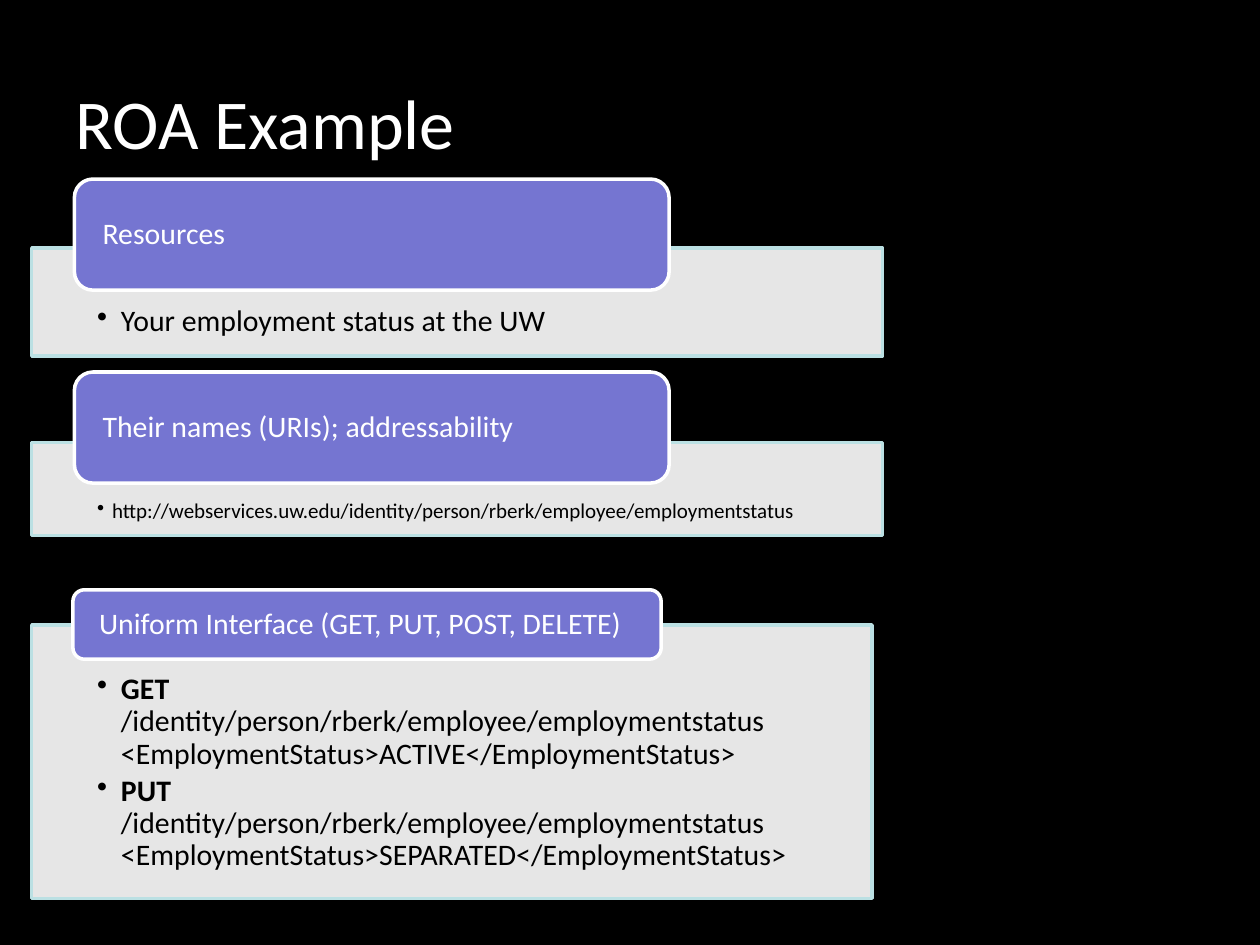
from pptx import Presentation
from pptx.dml.color import RGBColor
from pptx.enum.shapes import MSO_SHAPE
from pptx.enum.text import MSO_ANCHOR, MSO_AUTO_SIZE, PP_ALIGN
from pptx.oxml.ns import qn
from pptx.util import Cm, Pt
from lxml.etree import SubElement

COLORS = {"background": "000000", "light": "FFFFFF", "dark": "000000",
          "header": "7575D1", "panel_edge": "BBE0E3"}
FONT = "Calibri"
TITLE = "ROA Example"
PANEL_LEFT = 0.64
SIDE_INSET = 1.32
HEADER_INSET = 0.46

SECTIONS = [
    {"heading": "Resources", "header": (1.5, 3.61, 11.99, 2.24),
     "panel": (5.0, 17.15, 2.18), "insets": (1.17, 0.33),
     "size": 17, "indent": 0.48,
     "items": [("", ["Your employment status at the UW"])]},
    {"heading": "Their names (URIs); addressability",
     "header": (1.5, 7.5, 11.99, 2.24),
     "panel": (8.92, 17.15, 1.88), "insets": (1.17, 0.23),
     "size": 12, "indent": 0.3,
     "items": [("", ["http://webservices.uw.edu/identity/person/rberk/employee/employmentstatus"])]},
    {"heading": "Uniform Interface (GET, PUT, POST, DELETE)",
     "header": (1.47, 11.89, 11.86, 1.4),
     "panel": (12.6, 16.94, 5.51), "insets": (0.99, 0.33),
     "size": 17, "indent": 0.48,
     "items": [
         ("GET ", ["/identity/person/rberk/employee/employmentstatus",
                   "<EmploymentStatus>ACTIVE</EmploymentStatus>"]),
         ("PUT ", ["/identity/person/rberk/employee/employmentstatus",
                   "<EmploymentStatus>SEPARATED</EmploymentStatus>"])]},
]


def color(name):
    return RGBColor.from_string(COLORS[name])


def add_run(paragraph, text, size, color_name, bold=False):
    run = paragraph.add_run()
    run.text = text
    run.font.name = FONT
    run.font.size = Pt(size)
    run.font.bold = bold
    run.font.color.rgb = color(color_name)


def add_box(slide, preset, bounds, fill, edge, insets, anchor):
    box = slide.shapes.add_shape(preset, *map(Cm, bounds))
    box.shadow.inherit = False
    box.fill.solid()
    box.fill.fore_color.rgb = color(fill)
    box.line.color.rgb = color(edge)
    box.line.width = Pt(2)
    frame = box.text_frame
    frame.word_wrap = True
    frame.vertical_anchor = anchor
    side, top, bottom = map(Cm, insets)
    frame.margin_left = frame.margin_right = side
    frame.margin_top, frame.margin_bottom = top, bottom
    return box


def add_bullet(paragraph, indent):
    properties = paragraph._p.get_or_add_pPr()
    properties.set("marL", str(Cm(indent)))
    properties.set("indent", str(-Cm(indent)))
    SubElement(properties, qn("a:buChar"), char="•")


def add_panel(slide, section):
    top, width, height = section["panel"]
    panel = add_box(slide, MSO_SHAPE.RECTANGLE, (PANEL_LEFT, top, width, height),
                    "light", "panel_edge", (SIDE_INSET, *section["insets"]),
                    MSO_ANCHOR.TOP)
    fill_color = panel._element.spPr.find(qn("a:solidFill"))[0]
    SubElement(fill_color, qn("a:alpha"), val="90000")
    frame = panel.text_frame
    for index, (method, lines) in enumerate(section["items"]):
        item = frame.add_paragraph() if index else frame.paragraphs[0]
        add_bullet(item, section["indent"])
        item.alignment = PP_ALIGN.LEFT
        item.line_spacing = 0.9
        item.space_after = Pt(3)
        if method:
            add_run(item, method, section["size"], "dark", bold=True)
        for number, line in enumerate(lines):
            if number:
                item.add_line_break()
            add_run(item, line, section["size"], "dark")


def add_header(slide, section):
    header = add_box(slide, MSO_SHAPE.ROUNDED_RECTANGLE, section["header"],
                     "header", "light", (HEADER_INSET, 0, 0), MSO_ANCHOR.MIDDLE)
    heading = header.text_frame.paragraphs[0]
    heading.alignment = PP_ALIGN.LEFT
    heading.line_spacing = 0.9
    add_run(heading, section["heading"], 17, "light")


def main():
    deck = Presentation()
    deck.slide_width, deck.slide_height = Cm(25.4), Cm(19.05)
    slide = deck.slides.add_slide(deck.slide_layouts[5])
    slide.background.fill.solid()
    slide.background.fill.fore_color.rgb = color("background")

    title = slide.shapes.title
    title.left, title.top, title.width, title.height = map(Cm, (1.27, 1.27, 21.16, 2.34))
    title.text_frame.auto_size = MSO_AUTO_SIZE.NONE
    title.text_frame.vertical_anchor = MSO_ANCHOR.MIDDLE
    title.text_frame.paragraphs[0].alignment = PP_ALIGN.LEFT
    add_run(title.text_frame.paragraphs[0], TITLE, 40, "light")

    for section in SECTIONS:
        add_panel(slide, section)
        add_header(slide, section)
    deck.save("out.pptx")


if __name__ == "__main__":
    main()
